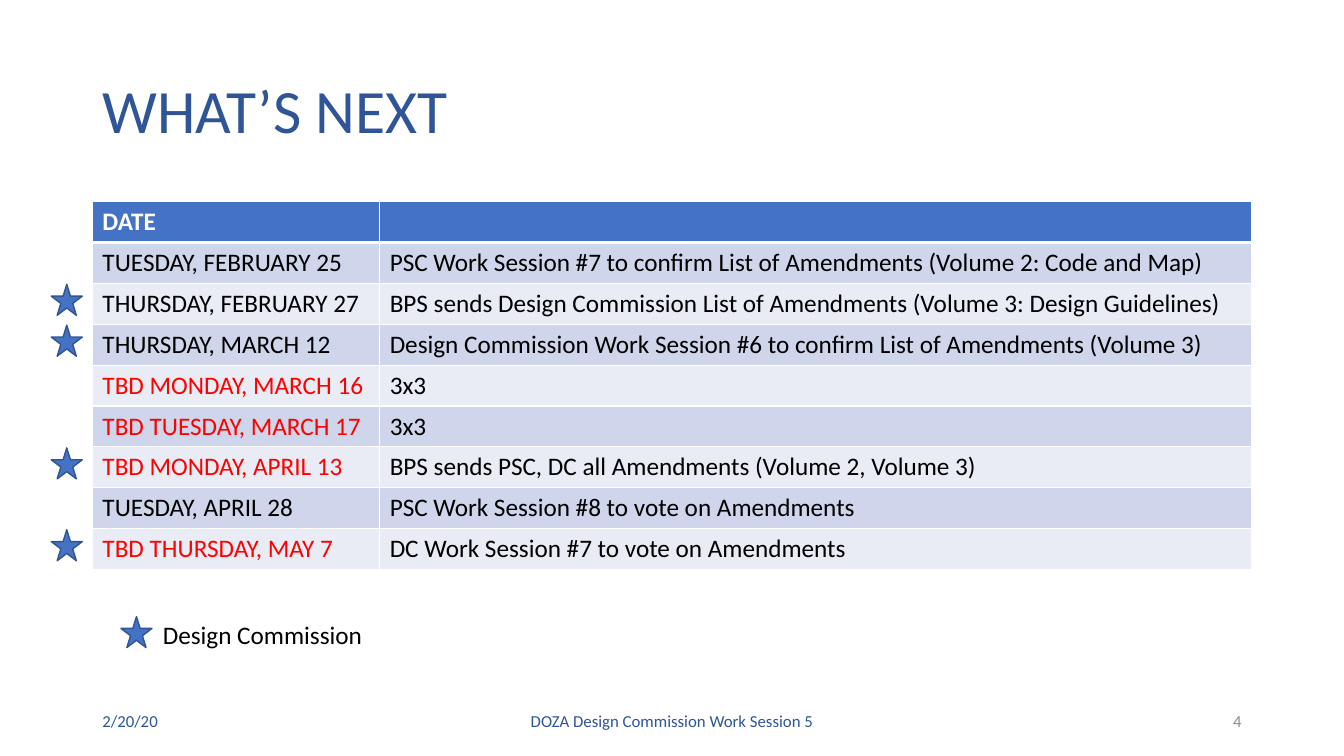
from dataclasses import dataclass

import pptx
import pptx.dml.color
import pptx.enum.shapes
import pptx.enum.text
import pptx.oxml
import pptx.oxml.ns
import pptx.util

ALIGN = pptx.enum.text.PP_ALIGN
ANCHOR = pptx.enum.text.MSO_ANCHOR
AUTO_SIZE = pptx.enum.text.MSO_AUTO_SIZE


@dataclass(frozen=True)
class Theme:
    font: str = "Calibri"
    title_size: int = 44
    body_size: int = 18
    footer_size: int = 12
    accent: str = "4472C4"
    star_line: str = "325491"
    heading: str = "2F5597"
    muted: str = "8C8C8C"
    text: str = "000000"
    pending: str = "FF0000"
    white: str = "FFFFFF"
    bands: tuple = ("CFD5EA", "E9EBF5")


def color(value):
    return pptx.dml.color.RGBColor.from_string(value)


class SlideBuilder:
    COLUMNS = 160
    ROWS = 90

    def __init__(self, presentation, theme):
        self.theme = theme
        self.column = presentation.slide_width / self.COLUMNS
        self.row = presentation.slide_height / self.ROWS
        self.slide = presentation.slides.add_slide(presentation.slide_layouts[6])

    def place(self, left, top, width, height):
        return (round(left * self.column), round(top * self.row),
                round(width * self.column), round(height * self.row))

    def add_text_run(self, paragraph, text, size, ink, bold=False):
        run = paragraph.add_run()
        run.text = text
        run.font.name = self.theme.font
        run.font.size = pptx.util.Pt(size)
        run.font.bold = bold
        run.font.color.rgb = color(ink)

    def text(self, box, text, size, ink, align=ALIGN.LEFT, anchor=ANCHOR.MIDDLE,
             line_spacing=None, auto_size=AUTO_SIZE.NONE):
        shape = self.slide.shapes.add_textbox(*self.place(*box))
        frame = shape.text_frame
        frame.word_wrap = True
        frame.auto_size = auto_size
        frame.vertical_anchor = anchor
        paragraph = frame.paragraphs[0]
        paragraph.alignment = align
        paragraph.line_spacing = line_spacing
        self.add_text_run(paragraph, text, size, ink)

    def star(self, left, top, size):
        shape = self.slide.shapes.add_shape(
            pptx.enum.shapes.MSO_SHAPE.STAR_5_POINT, *self.place(left, top, size, size))
        shape.shadow.inherit = False
        shape.fill.solid()
        shape.fill.fore_color.rgb = color(self.theme.accent)
        shape.line.color.rgb = color(self.theme.star_line)
        shape.line.width = pptx.util.Pt(1)

    def border(self, cell, side, points):
        properties = cell._tc.get_or_add_tcPr()
        properties.append(pptx.oxml.parse_xml(
            f'<a:{side} {pptx.oxml.ns.nsdecls("a")} w="{pptx.util.Pt(points)}">'
            f'<a:solidFill><a:srgbClr val="{self.theme.white}"/></a:solidFill></a:{side}>'))

    def cell(self, cell, text, ink, fill, bold, top, bottom):
        for side, points in (("lnL", 1), ("lnR", 1), ("lnT", top), ("lnB", bottom)):
            self.border(cell, side, points)
        cell.fill.solid()
        cell.fill.fore_color.rgb = color(fill)
        if text:
            self.add_text_run(cell.text_frame.paragraphs[0], text,
                              self.theme.body_size, ink, bold)

    def table(self, left, top, widths, row_height, rows):
        box = self.place(left, top, sum(widths), row_height * len(rows))
        table = self.slide.shapes.add_table(len(rows), len(widths), *box).table
        for column, width in zip(table.columns, widths):
            column.width = round(width * self.column)
        for index, values in enumerate(rows):
            table.rows[index].height = round(row_height * self.row)
            header = index == 0
            fill = self.theme.accent if header else self.theme.bands[(index - 1) % 2]
            for position, text in enumerate(values):
                ink = self.theme.white if header else self.theme.text
                if text.startswith("TBD"):
                    ink = self.theme.pending
                self.cell(table.cell(index, position), text, ink, fill, header,
                          3 if index == 1 else 1, 3 if header else 1)


SCHEDULE = [
    ("DATE", ""),
    ("TUESDAY, FEBRUARY 25",
     "PSC Work Session #7 to confirm List of Amendments (Volume 2: Code and Map)"),
    ("THURSDAY, FEBRUARY 27",
     "BPS sends Design Commission List of Amendments (Volume 3: Design Guidelines)"),
    ("THURSDAY, MARCH 12",
     "Design Commission Work Session #6 to confirm List of Amendments (Volume 3)"),
    ("TBD MONDAY, MARCH 16", "3x3"),
    ("TBD TUESDAY, MARCH 17", "3x3"),
    ("TBD MONDAY, APRIL 13", "BPS sends PSC, DC all Amendments (Volume 2, Volume 3)"),
    ("TUESDAY, APRIL 28", "PSC Work Session #8 to vote on Amendments"),
    ("TBD THURSDAY, MAY 7", "DC Work Session #7 to vote on Amendments"),
]
DESIGN_COMMISSION_ROWS = (2, 3, 6, 8)
LEFT = 11
CONTENT_WIDTH = 138
TABLE_TOP = 24
ROW_HEIGHT = 4.87
STAR_SIZE = 3.7
FOOTER_TOP = 83.4
FOOTER_HEIGHT = 4.8


def main():
    presentation = pptx.Presentation()
    presentation.slide_width = pptx.util.Inches(13.33)
    presentation.slide_height = pptx.util.Inches(7.5)
    theme = Theme()
    builder = SlideBuilder(presentation, theme)

    builder.table(LEFT, TABLE_TOP, (34.2, 103.8), ROW_HEIGHT, SCHEDULE)
    builder.text((LEFT, 4.8, CONTENT_WIDTH, 17.4), "WHAT’S NEXT",
                 theme.title_size, theme.heading, line_spacing=0.9)

    footers = (
        (LEFT, 36, "2/20/20", theme.heading, ALIGN.LEFT),
        (53, 54, "DOZA Design Commission Work Session 5", theme.heading, ALIGN.CENTER),
        (113, 36, "4", theme.muted, ALIGN.RIGHT),
    )
    for left, width, text, ink, align in footers:
        builder.text((left, FOOTER_TOP, width, FOOTER_HEIGHT), text,
                     theme.footer_size, ink, align)

    for row in DESIGN_COMMISSION_ROWS:
        builder.star(6.1, TABLE_TOP + row * ROW_HEIGHT + 0.1, STAR_SIZE)
    builder.star(14.4, 73.4, STAR_SIZE)
    builder.text((18.2, 73.1, 70, 4.8), "Design Commission", theme.body_size, theme.text,
                 anchor=ANCHOR.TOP, auto_size=AUTO_SIZE.SHAPE_TO_FIT_TEXT)

    presentation.save("out.pptx")


if __name__ == "__main__":
    main()
